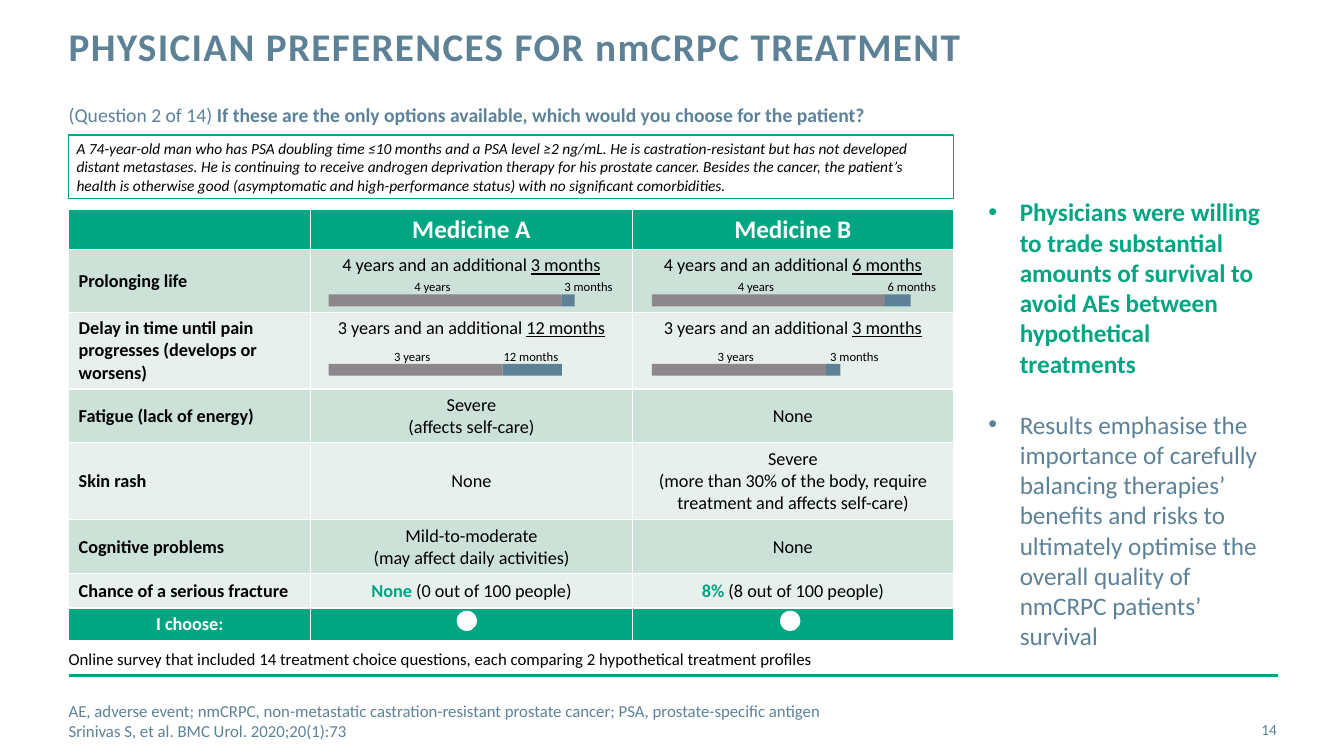
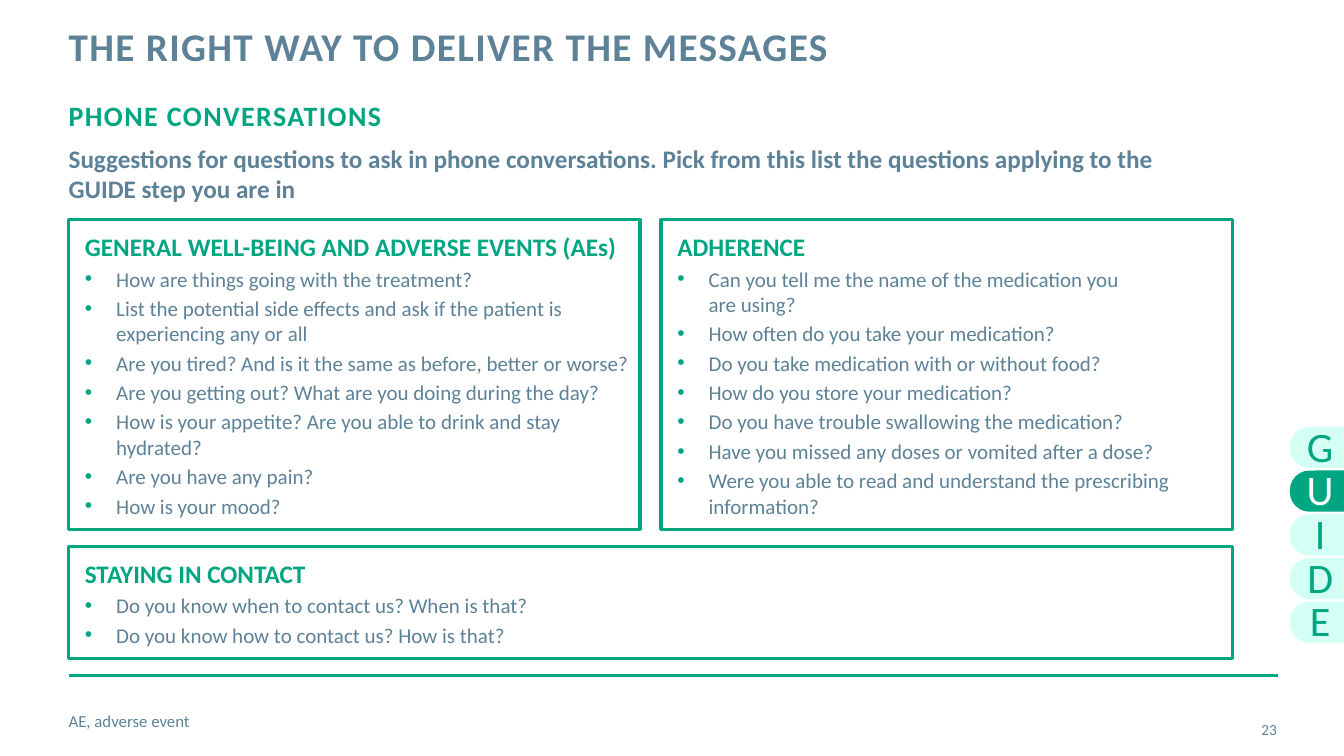
"""Builds two slides: a treatment-choice table and a guide for phone conversations."""
import pptx
import pptx.dml.color
import pptx.enum.shapes
import pptx.enum.text
import pptx.oxml
import pptx.oxml.ns
import pptx.util
from lxml import etree

Cm, Pt = pptx.util.Cm, pptx.util.Pt
rgb = pptx.dml.color.RGBColor.from_string
qn = pptx.oxml.ns.qn
SHAPE = pptx.enum.shapes.MSO_SHAPE
ALIGN = pptx.enum.text.PP_ALIGN
ANCHOR = pptx.enum.text.MSO_ANCHOR

GREEN, SLATE, GREY = "00A582", "5D8298", "8B878B"
WHITE, BLACK, MINT = "FFFFFF", "000000", "BAFFF0"
BAND_DARK, BAND_LIGHT = "CCE1D8", "E7F0ED"
LEFT, CONTENT_WIDTH = 1.73, 30.48
BULLET_INDENT = 0.79


def add_box(slide, left, top, width, height, kind=None, fill=None, line=None,
            line_width=1, insets=(0, 0, 0, 0), anchor=ANCHOR.TOP):
    """Adds a text box, or a preset shape when kind is given."""
    place = Cm(left), Cm(top), Cm(width), Cm(height)
    if kind is None:
        shape = slide.shapes.add_textbox(*place)
    else:
        shape = slide.shapes.add_shape(kind, *place)
        shape.shadow.inherit = False
        if fill:
            shape.fill.solid()
            shape.fill.fore_color.rgb = rgb(fill)
        else:
            shape.fill.background()
        if line:
            shape.line.color.rgb = rgb(line)
            shape.line.width = Pt(line_width)
        else:
            shape.line.fill.background()
    frame = shape.text_frame
    frame.word_wrap = True
    frame.vertical_anchor = anchor
    frame.margin_left, frame.margin_top, frame.margin_right, frame.margin_bottom = map(Cm, insets)
    return shape


def write(paragraph, text, size, color, bold=False, italic=False, align=ALIGN.LEFT,
          before=0, bullet=None, tracking=0):
    """Fills a paragraph from a string, or from (text, font changes) pairs."""
    paragraph.alignment = align
    paragraph.space_before = Pt(before)
    if bullet:
        properties = paragraph._p.get_or_add_pPr()
        properties.set("marL", str(Cm(BULLET_INDENT)))
        properties.set("indent", str(-Cm(BULLET_INDENT)))
        bullet_color = etree.SubElement(properties, qn("a:buClr"))
        etree.SubElement(bullet_color, qn("a:srgbClr"), val=bullet)
        etree.SubElement(properties, qn("a:buFont"), typeface="Arial")
        etree.SubElement(properties, qn("a:buChar"), char="•")
    font = paragraph.font
    font.name, font.size, font.bold, font.italic = "Calibri", Pt(size), bold, italic
    font.color.rgb = rgb(color)
    if isinstance(text, str):
        paragraph.text = text
    else:
        for words, changes in text:
            run = paragraph.add_run()
            run.text = words
            for name, value in changes.items():
                if name == "color":
                    run.font.color.rgb = rgb(value)
                else:
                    setattr(run.font, name, value)
    if tracking:
        for run in paragraph.runs:
            run._r.get_or_add_rPr().set("spc", str(tracking * 100))


presentation = pptx.Presentation()
presentation.slide_width, presentation.slide_height = Cm(33.87), Cm(19.05)

frames = [
    ("PHYSICIAN PREFERENCES FOR nmCRPC TREATMENT", "14",
     ["AE, adverse event; nmCRPC, non-metastatic castration-resistant prostate cancer; "
      "PSA, prostate-specific antigen",
      "Srinivas S, et al. BMC Urol. 2020;20(1):73"]),
    ("THE RIGHT WAY TO DELIVER THE MESSAGES", "23", ["AE, adverse event"]),
]
for title, number, notes in frames:
    slide = presentation.slides.add_slide(presentation.slide_layouts[6])
    rule = slide.shapes.add_connector(pptx.enum.shapes.MSO_CONNECTOR.STRAIGHT, Cm(LEFT), Cm(17.02),
                                      Cm(LEFT + CONTENT_WIDTH), Cm(17.02))
    rule.line.color.rgb = rgb(GREEN)
    rule.line.width = Pt(2)
    etree.SubElement(rule._element.spPr, qn("a:effectLst"))
    heading = add_box(slide, LEFT, 0.69, 24.28, 2.24).text_frame.paragraphs[0]
    write(heading, title, 28, SLATE, bold=True, tracking=1)
    heading.line_spacing = Pt(30)
    page = add_box(slide, 30, 17.86, 2.18, 1.02, anchor=ANCHOR.MIDDLE)
    write(page.text_frame.paragraphs[0], number, 11, SLATE, align=ALIGN.RIGHT)
    footer = add_box(slide, LEFT, 17.65, 22.56, 1.02, anchor=ANCHOR.MIDDLE).text_frame
    for index, note in enumerate(notes):
        write(footer.add_paragraph() if index else footer.paragraphs[0], note, 12, SLATE)

survey, phone = presentation.slides

question = add_box(survey, LEFT, 2.59, CONTENT_WIDTH, 0.8)
write(question.text_frame.paragraphs[0],
      [("(Question 2 of 14) ", {}),
       ("If these are the only options available, which would you choose for the patient?",
        {"bold": True})], 14, SLATE)
patient = add_box(survey, LEFT, 3.4, 22.3, 1.6, SHAPE.RECTANGLE, line=GREEN,
                  insets=(0.2, 0.1, 0.2, 0))
write(patient.text_frame.paragraphs[0],
      "A 74-year-old man who has PSA doubling time ≤10 months and a PSA level ≥2 ng/mL. "
      "He is castration-resistant but has not developed distant metastases. He is continuing "
      "to receive androgen deprivation therapy for his prostate cancer. Besides the cancer, "
      "the patient’s health is otherwise good (asymptomatic and high-performance status) "
      "with no significant comorbidities.", 11, BLACK, italic=True)

underlined, highlighted = {"underline": True}, {"bold": True, "color": GREEN}
rows = [
    (1.01, GREEN, "", "Medicine A", "Medicine B"),
    (1.58, BAND_DARK, "Prolonging life",
     [("4 years and an additional ", {}), ("3 months", underlined)],
     [("4 years and an additional ", {}), ("6 months", underlined)]),
    (1.93, BAND_LIGHT, "Delay in time until pain progresses (develops or worsens)",
     [("3 years and an additional ", {}), ("12 months", underlined)],
     [("3 years and an additional ", {}), ("3 months", underlined)]),
    (1.36, BAND_DARK, "Fatigue (lack of energy)", "Severe\n(affects self-care)", "None"),
    (1.94, BAND_LIGHT, "Skin rash", "None",
     "Severe\n(more than 30% of the body, require treatment and affects self-care)"),
    (1.36, BAND_DARK, "Cognitive problems",
     "Mild-to-moderate\n(may affect daily activities)", "None"),
    (0.86, BAND_LIGHT, "Chance of a serious fracture",
     [("None", highlighted), (" (0 out of 100 people)", {})],
     [("8%", highlighted), (" (8 out of 100 people)", {})]),
    (0.83, GREEN, "I choose:", "", ""),
]
table = survey.shapes.add_table(len(rows), 3, Cm(LEFT), Cm(5.28), Cm(22.3),
                                Cm(sum(row[0] for row in rows))).table
table.horz_banding = False
for column, width in zip(table.columns, (6.1, 8.1, 8.1)):
    column.width = Cm(width)
for row_index, (height, fill, *texts) in enumerate(rows):
    table.rows[row_index].height = Cm(height)
    for column_index, text in enumerate(texts):
        cell = table.cell(row_index, column_index)
        cell.fill.solid()
        cell.fill.fore_color.rgb = rgb(fill)
        has_bar = row_index in (1, 2) and column_index > 0
        cell.vertical_anchor = ANCHOR.TOP if has_bar else ANCHOR.MIDDLE
        if fill == GREEN:
            cell.margin_top = cell.margin_bottom = 0
        write(cell.text_frame.paragraphs[0], text, 18 if row_index == 0 else 13,
              WHITE if fill == GREEN else BLACK, bold=fill == GREEN or column_index == 0,
              align=ALIGN.CENTER if fill == GREEN or column_index else ALIGN.LEFT)

bar_rows = [
    (7.42, "4 years", 5.87, 2.62, 6.55, [("3 months", 0.33), ("6 months", 0.65)]),
    (9.17, "3 years", 4.39, 2.11, 5.1, [("12 months", 1.49), ("3 months", 0.36)]),
]
for top, years, years_length, years_center, months_center, additions in bar_rows:
    for left, (months, months_length) in zip((8.28, 16.43), additions):
        add_box(survey, left, top, years_length, 0.3, SHAPE.RECTANGLE, GREY)
        add_box(survey, left + years_length, top, months_length, 0.3, SHAPE.RECTANGLE, SLATE)
        for label, center in ((years, years_center), (months, months_center)):
            caption = add_box(survey, left + center - 1, top - 0.38, 2, 0.38)
            write(caption.text_frame.paragraphs[0], label, 9, BLACK, align=ALIGN.CENTER)

for left in (11.51, 19.66):
    add_box(survey, left, 15.39, 0.51, 0.51, SHAPE.OVAL, WHITE)
source_note = add_box(survey, LEFT, 16.23, 22.3, 0.76, insets=(0, 0.13, 0.25, 0.13))
write(source_note.text_frame.paragraphs[0],
      "Online survey that included 14 treatment choice questions, each comparing "
      "2 hypothetical treatment profiles", 12, BLACK)

findings = add_box(survey, 24.66, 4.83, 7.47, 11.79, insets=(0.25, 0.13, 0.25, 0.13)).text_frame
write(findings.paragraphs[0],
      "Physicians were willing to trade substantial amounts of survival to avoid AEs between "
      "hypothetical treatments", 18, GREEN, bold=True, bullet=GREEN)
write(findings.add_paragraph(),
      "Results emphasise the importance of carefully balancing therapies’ benefits and risks "
      "to ultimately optimise the overall quality of nmCRPC patients’ survival",
      18, SLATE, before=22, bullet=SLATE)

section = add_box(phone, LEFT, 2.49, CONTENT_WIDTH, 1)
write(section.text_frame.paragraphs[0], "PHONE CONVERSATIONS", 20, GREEN, bold=True, tracking=1)
introduction = add_box(phone, LEFT, 3.61, CONTENT_WIDTH, 1.6)
write(introduction.text_frame.paragraphs[0],
      "Suggestions for questions to ask in phone conversations. Pick from this list the "
      "questions applying to the\nGUIDE step you are in", 18, SLATE, bold=True)

panels = [
    (LEFT, 5.54, 14.4, 7.8, "GENERAL WELL-BEING AND ADVERSE EVENTS (AEs)", [
        "How are things going with the treatment?",
        "List the potential side effects and ask if the patient is experiencing any or all",
        "Are you tired? And is it the same as before, better or worse?",
        "Are you getting out? What are you doing during the day?",
        "How is your appetite? Are you able to drink and stay hydrated?",
        "Are you have any pain?",
        "How is your mood?"]),
    (16.66, 5.54, 14.4, 7.8, "ADHERENCE", [
        "Can you tell me the name of the medication you\nare using?",
        "How often do you take your medication?",
        "Do you take medication with or without food?",
        "How do you store your medication?",
        "Do you have trouble swallowing the medication?",
        "Have you missed any doses or vomited after a dose?",
        "Were you able to read and understand the prescribing information?"]),
    (LEFT, 13.77, 29.34, 2.82, "STAYING IN CONTACT", [
        "Do you know when to contact us? When is that?",
        "Do you know how to contact us? How is that?"]),
]
for left, top, width, height, topic, prompts in panels:
    panel = add_box(phone, left, top, width, height, SHAPE.RECTANGLE, line=GREEN,
                    line_width=2.25, insets=(0.41, 0.3, 0.2, 0.13)).text_frame
    write(panel.paragraphs[0], topic, 18, GREEN, bold=True)
    for prompt in prompts:
        write(panel.add_paragraph(), prompt, 15, SLATE, before=3, bullet=GREEN)

for index, letter in enumerate("GUIDE"):
    top = 10.59 + 1.1 * index
    active = letter == "U"
    tab = add_box(phone, 32.67, top, 1.04, 1.37, SHAPE.ROUND_2_SAME_RECTANGLE,
                  GREEN if active else MINT)
    tab.rotation = 270
    tab.adjustments[0], tab.adjustments[1] = 0.48, 0
    if not active:
        tab_color = tab._element.spPr.find(qn("a:solidFill")).find(qn("a:srgbClr"))
        etree.SubElement(tab_color, qn("a:alpha"), val="62000")
    step = add_box(phone, 32.77, top, 1, 1.27)
    write(step.text_frame.paragraphs[0], letter, 30, WHITE if active else GREEN,
          align=ALIGN.CENTER)

presentation.save("out.pptx")
